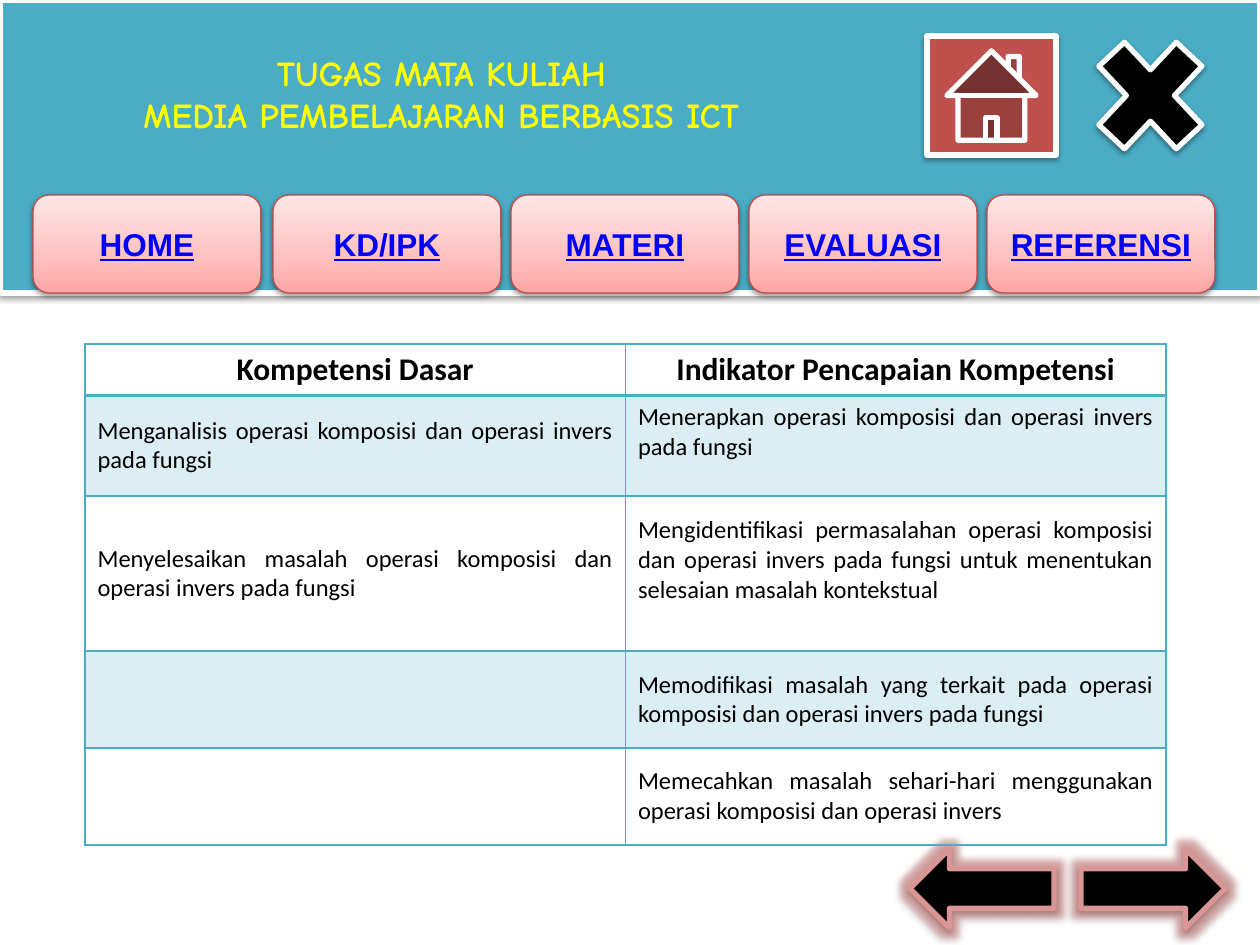
from lxml.etree import SubElement
from pptx import Presentation
from pptx.dml.color import RGBColor
from pptx.enum.shapes import MSO_SHAPE
from pptx.enum.text import MSO_ANCHOR, MSO_AUTO_SIZE, PP_ALIGN
from pptx.oxml.ns import qn
from pptx.util import Emu, Pt

PX = 914400 // 126

TEAL = RGBColor(0x4B, 0xAC, 0xC6)
WHITE = RGBColor(0xFF, 0xFF, 0xFF)
BLACK = RGBColor(0x00, 0x00, 0x00)
YELLOW = RGBColor(0xFF, 0xFF, 0x00)
BLUE = RGBColor(0x00, 0x00, 0xFF)
RED = RGBColor(0xC0, 0x50, 0x4D)
DARK_RED = RGBColor(0xBF, 0x4C, 0x48)
PINK = RGBColor(0xD9, 0x96, 0x94)
BUTTON_STOPS = [
    (0, RGBColor(0xFF, 0xA6, 0xA5)),
    (35, RGBColor(0xFF, 0xC0, 0xBF)),
    (100, RGBColor(0xFF, 0xE7, 0xE7)),
]

TITLE = ["TUGAS MATA KULIAH", "MEDIA PEMBELAJARAN BERBASIS ICT"]
MENU = [("HOME", 33), ("KD/IPK", 273), ("MATERI", 511), ("EVALUASI", 749), ("REFERENSI", 987)]
ROWS = [
    ("Kompetensi Dasar", "Indikator Pencapaian Kompetensi"),
    ("Menganalisis operasi komposisi dan operasi invers pada fungsi",
     "Menerapkan operasi komposisi dan operasi invers pada fungsi"),
    ("Menyelesaikan masalah operasi komposisi dan operasi invers pada fungsi",
     "Mengidentifikasi permasalahan operasi komposisi dan operasi invers pada fungsi "
     "untuk menentukan selesaian masalah kontekstual"),
    ("", "Memodifikasi masalah yang terkait pada operasi komposisi dan operasi invers pada fungsi"),
    ("", "Memecahkan masalah sehari-hari menggunakan operasi komposisi dan operasi invers"),
]
ROW_HEIGHTS = [50, 101, 155, 97, 97]
RAISED_CELLS = [(1, 1), (2, 1)]


def px(*values):
    return [Emu(v * PX) for v in values]


def add_color(parent, color, alpha=None):
    clr = SubElement(parent, qn("a:srgbClr"), val=str(color))
    if alpha is not None:
        SubElement(clr, qn("a:alpha"), val=str(alpha * 1000))


def add_run(p, text, font, size, color, bold):
    r = p.add_run()
    r.text = text
    r.font.name = font
    r.font.size = Pt(size)
    r.font.color.rgb = color
    r.font.bold = bold
    return r


def add_shape(slide, kind, box, fill, line, width, glow=False):
    sp = slide.shapes.add_shape(kind, *px(*box))
    if fill is not None:
        sp.fill.solid()
        sp.fill.fore_color.rgb = fill
    sp.line.color.rgb = line
    sp.line.width = Pt(width)
    sp.shadow.inherit = False
    effects = sp._element.spPr.find(qn("a:effectLst"))
    if glow:
        add_color(SubElement(effects, qn("a:glow"), rad=str(Pt(8))), RED, 40)
    shadow = SubElement(effects, qn("a:outerShdw"), blurRad=str(Pt(3.1)), dist=str(Pt(1.6)),
                        dir="5400000", rotWithShape="0")
    add_color(shadow, BLACK, 38)
    return sp


def add_button(slide, text, left):
    sp = add_shape(slide, MSO_SHAPE.ROUNDED_RECTANGLE, (left, 195, 228, 98), None, DARK_RED, 0.75)
    sp.fill.gradient()
    sp.fill.gradient_angle = 90
    stops = sp._element.spPr.find(".//" + qn("a:gsLst"))
    for gs in list(stops):
        stops.remove(gs)
    for pos, color in BUTTON_STOPS:
        add_color(SubElement(stops, qn("a:gs"), pos=str(pos * 1000)), color)
    tf = sp.text_frame
    tf.word_wrap = True
    tf.vertical_anchor = MSO_ANCHOR.MIDDLE
    p = tf.paragraphs[0]
    p.alignment = PP_ALIGN.CENTER
    add_run(p, text, "Arial", 18, BLUE, True).font.underline = True


def set_borders(cell, row):
    tcPr = cell._tc.get_or_add_tcPr()
    widths = {"L": 1, "R": 1, "T": 2 if row == 1 else 1, "B": 2 if row == 0 else 1}
    for side, width in widths.items():
        ln = SubElement(tcPr, qn("a:ln" + side), w=str(Pt(width)))
        add_color(SubElement(ln, qn("a:solidFill")), TEAL)


def add_competency_table(slide):
    frame = slide.shapes.add_table(len(ROWS), 2, *px(85, 344, 1081, sum(ROW_HEIGHTS)))
    table = frame.table
    table.horz_banding = False
    for i, (texts, height) in enumerate(zip(ROWS, ROW_HEIGHTS)):
        table.rows[i].height = Emu(height * PX)
        for j, text in enumerate(texts):
            cell = table.cell(i, j)
            cell.vertical_anchor = MSO_ANCHOR.MIDDLE
            set_borders(cell, i)
            if i % 2:
                cell.fill.solid()
                cell.fill.fore_color.rgb = TEAL
                clr = cell._tc.tcPr.find(qn("a:solidFill")).find(qn("a:srgbClr"))
                SubElement(clr, qn("a:alpha"), val="20000")
            else:
                cell.fill.background()
            if (i, j) in RAISED_CELLS:
                cell.margin_bottom = Emu(33 * PX)
            p = cell.text_frame.paragraphs[0]
            p.alignment = PP_ALIGN.JUSTIFY if i else PP_ALIGN.CENTER
            if text:
                add_run(p, text, "Calibri", 14 if i else 18, BLACK, i == 0)
            else:
                p.font.size = Pt(14)


def add_title(slide):
    title = slide.shapes.title
    title.left, title.top, title.width, title.height = px(74, 45, 735, 97)
    slide.shapes._spTree.append(title._element)
    tf = title.text_frame
    tf.word_wrap = True
    tf.auto_size = MSO_AUTO_SIZE.NONE
    tf.vertical_anchor = MSO_ANCHOR.MIDDLE
    for i, line in enumerate(TITLE):
        p = tf.add_paragraph() if i else tf.paragraphs[0]
        p.alignment = PP_ALIGN.CENTER
        p.space_before = Pt(0)
        add_run(p, line, "Comic Neue", 20, YELLOW, True)


def main():
    prs = Presentation()
    prs.slide_width, prs.slide_height = px(1260, 945)
    slide = prs.slides.add_slide(prs.slide_layouts[5])
    add_shape(slide, MSO_SHAPE.RECTANGLE, (0, 0, 1260, 293), TEAL, WHITE, 3)
    for text, left in MENU:
        add_button(slide, text, left)
    add_shape(slide, MSO_SHAPE.ACTION_BUTTON_HOME, (927, 36, 129, 119), RED, WHITE, 3)
    add_shape(slide, MSO_SHAPE.MATH_MULTIPLY, (1076, 16, 149, 159), BLACK, WHITE, 3)
    add_title(slide)
    for left, rotation in [(910, 0), (1081, 180)]:
        arrow = add_shape(slide, MSO_SHAPE.LEFT_ARROW, (left, 849, 144, 79), BLACK, PINK, 3, glow=True)
        arrow.rotation = rotation
    add_competency_table(slide)
    prs.save("out.pptx")


if __name__ == "__main__":
    main()
